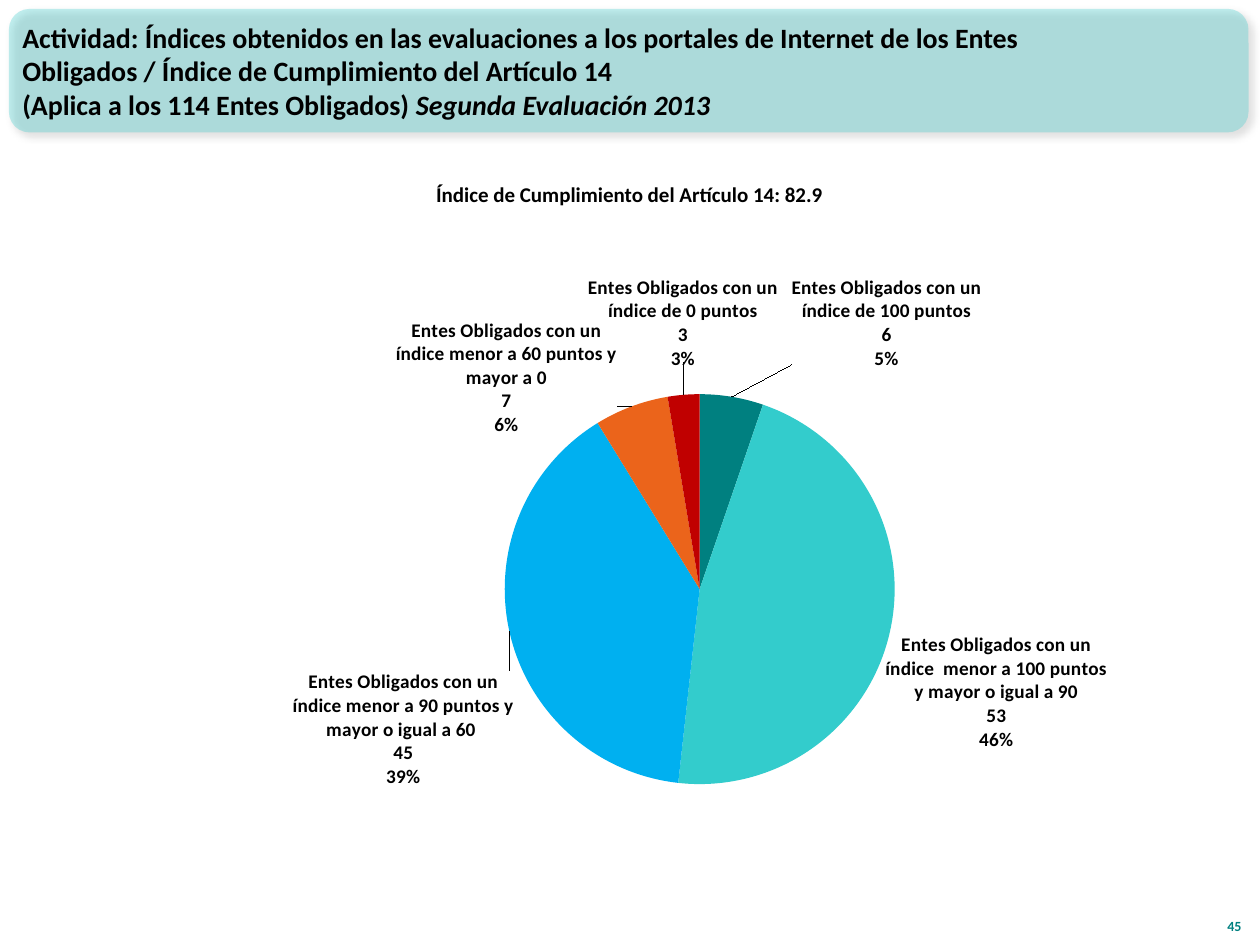
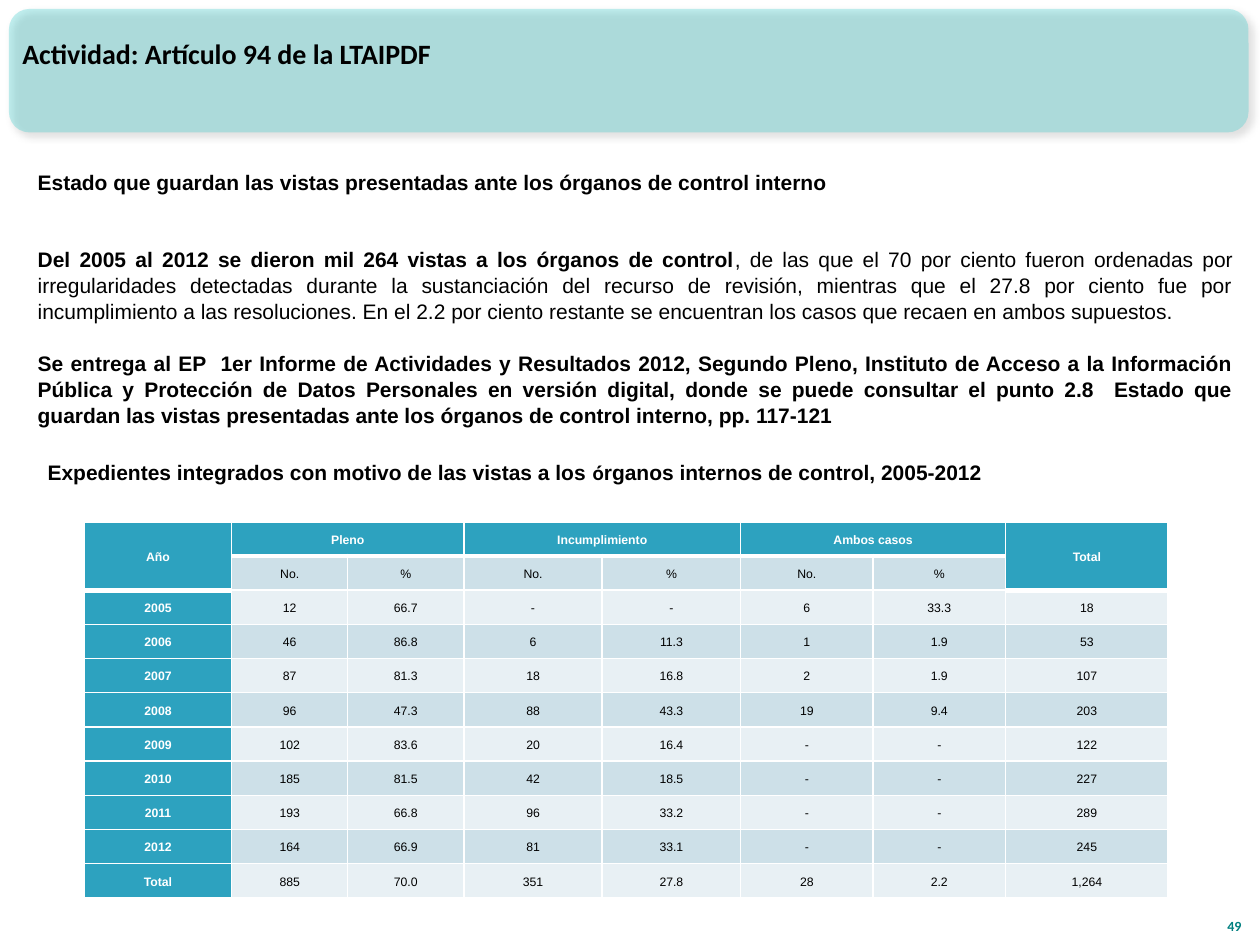
from lxml import etree
from pptx import Presentation
from pptx.chart.data import CategoryChartData as Data
from pptx.dml.color import RGBColor as RGB
from pptx.enum.chart import XL_CHART_TYPE as Kind
from pptx.enum.shapes import MSO_SHAPE as Shape
from pptx.enum.text import MSO_ANCHOR as Anchor, PP_ALIGN as Align
from pptx.oxml import parse_xml
from pptx.oxml.ns import nsdecls, qn
from pptx.util import Cm, Pt

HUES = {
    "ink": "000000", "white": "FFFFFF", "band": "33CCCC", "page": "008080",
    "head": "2DA2BF", "dark": "CDE0E8", "pale": "E8F0F4",
}
SLICES = ["008080", "33CCCC", "00B0F0", "EB641B", "C00000"]
CATS = [
    "Entes Obligados con un índice de 100 puntos",
    "Entes Obligados con un índice  menor a 100 puntos y mayor o igual a 90",
    "Entes Obligados con un índice menor a 90 puntos y mayor o igual a 60 ",
    "Entes Obligados con un índice menor a 60 puntos y mayor a 0",
    "Entes Obligados con un índice de 0 puntos",
]
COUNTS = [6, 53, 45, 7, 3]
# Shift of each label from its slice, and its height, as shares of the chart
SHIFTS = [(0.05, -0.04, 0.16), (-0.01, 0, 0.2), (0.01, 0.06, 0.2),
          (-0.01, 0.06, 0.2), (0, -0.04, 0.16)]
ROWS = [
    ["Año", "Pleno", "", "Incumplimiento", "", "Ambos casos", "", "Total"],
    ["", "No.", "%", "No.", "%", "No.", "%", ""],
    ["2005", "12", "66.7", "-", "-", "6", "33.3", "18"],
    ["2006", "46", "86.8", "6", "11.3", "1", "1.9", "53"],
    ["2007", "87", "81.3", "18", "16.8", "2", "1.9", "107"],
    ["2008", "96", "47.3", "88", "43.3", "19", "9.4", "203"],
    ["2009", "102", "83.6", "20", "16.4", "-", "-", "122"],
    ["2010", "185", "81.5", "42", "18.5", "-", "-", "227"],
    ["2011", "193", "66.8", "96", "33.2", "-", "-", "289"],
    ["2012", "164", "66.9", "81", "33.1", "-", "-", "245"],
    ["Total", "885", "70.0", "351", "27.8", "28", "2.2", "1,264"],
]
WIDTHS = [2.97, 2.34, 2.34, 2.79, 2.79, 2.67, 2.67, 3.28]
MERGES = [(0, 0, 1, 0), (0, 1, 0, 2), (0, 3, 0, 4), (0, 5, 0, 6), (0, 7, 1, 7)]


def put(obj, vals):
    for key, val in vals.items():
        setattr(obj, key, val)


def label(idx, shift):
    """Return the XML of one slice label: category, value and percent."""
    x, y, tall = shift
    shows = {"LegendKey": 0, "Val": 1, "CatName": 1, "SerName": 0,
             "Percent": 1, "BubbleSize": 0}
    flags = "".join(f'<c:show{k} val="{v}"/>' for k, v in shows.items())
    return f'''<c:dLbl><c:idx val="{idx}"/>
<c:layout><c:manualLayout><c:x val="{x}"/><c:y val="{y}"/></c:manualLayout></c:layout>
<c:txPr><a:bodyPr wrap="square"/><a:lstStyle/><a:p><a:pPr><a:defRPr sz="1100" b="1">
<a:solidFill><a:srgbClr val="{HUES['ink']}"/></a:solidFill><a:latin typeface="Calibri"/>
</a:defRPr></a:pPr><a:endParaRPr lang="es-MX"/></a:p></c:txPr>
<c:dLblPos val="outEnd"/>{flags}<c:separator>\n</c:separator>
<c:extLst><c:ext uri="{{CE6537A1-D6FC-4f65-9D91-7224C49458BB}}"
xmlns:c15="http://schemas.microsoft.com/office/drawing/2012/chart"><c15:layout>
<c:manualLayout><c:w val="0.2"/><c:h val="{tall}"/></c:manualLayout>
</c15:layout></c:ext></c:extLst></c:dLbl>'''


class Deck:
    def __init__(self):
        self.prs = Presentation()
        put(self.prs, {"slide_width": Cm(25.4), "slide_height": Cm(19.05)})
        self.slide = None

    def hue(self, name):
        return RGB.from_string(HUES[name])

    def fill(self, obj, code):
        obj.fill.solid()
        obj.fill.fore_color.rgb = RGB.from_string(code)

    def runs(self, para, parts, hue="ink", **base):
        """Write (text, changes) parts, each on top of the base font."""
        for text, diff in parts:
            run = para.add_run()
            run.text = text
            put(run.font, {"bold": True, **base, **diff})
            run.font.color.rgb = self.hue(hue)

    def text(self, at, paras, hue="ink", frame=None, form=None, gaps=(), **font):
        box = self.slide.shapes.add_textbox(*map(Cm, at)).text_frame
        put(box, {"word_wrap": True, **(frame or {})})
        for i, parts in enumerate(paras):
            para = box.add_paragraph() if i else box.paragraphs[0]
            put(para, form or {})
            if i and gaps:
                para.space_before = Pt(gaps[i - 1])
            self.runs(para, parts, hue, **font)

    def band(self):
        box = self.slide.shapes.add_shape(
            Shape.ROUNDED_RECTANGLE, *map(Cm, (0.18, 0.18, 24.99, 2.49)))
        self.fill(box, HUES["band"])
        box.line.fill.background()
        tint = box.fill._xPr.find(qn("a:solidFill"))[0]
        etree.SubElement(tint, qn("a:alpha")).set("val", "30000")
        box._element.spPr.append(parse_xml(
            f'<a:effectLst {nsdecls("a")}><a:outerShdw blurRad="50800" '
            'dist="38100" dir="2700000" algn="tl" rotWithShape="0">'
            f'<a:srgbClr val="{HUES["ink"]}"><a:alpha val="40000"/></a:srgbClr>'
            '</a:outerShdw></a:effectLst>'))

    def page(self, num, title, foot=0.13):
        """Start a slide with its band, title and number."""
        self.slide = self.prs.slides.add_slide(self.prs.slide_layouts[6])
        self.band()
        self.text((0.2, 0.23, 23.29, 2.39), title, name="Calibri", size=Pt(16),
                  frame={"vertical_anchor": Anchor.MIDDLE,
                         "margin_bottom": Cm(foot)})
        self.text((24.26, 17.93, 1.02, 1.02), [[(num, {})]], "page",
                  {"vertical_anchor": Anchor.BOTTOM},
                  {"alignment": Align.RIGHT}, name="Calibri", size=Pt(8))

    def pie(self, at):
        data = Data()
        data.categories = CATS
        data.add_series("Series 1", COUNTS)
        chart = self.slide.shapes.add_chart(Kind.PIE, *map(Cm, at), data).chart
        put(chart, {"has_title": False, "has_legend": False})
        put(chart.font, {"size": Pt(11), "bold": True, "name": "Calibri"})
        chart.font.color.rgb = self.hue("ink")
        plot = chart.plots[0]
        plot.vary_by_categories = True
        series = plot.series[0]
        for i, code in enumerate(SLICES):
            self.fill(series.points[i].format, code)
        tags = "".join(label(i, s) for i, s in enumerate(SHIFTS))
        node = parse_xml(
            f'<c:dLbls {nsdecls("c", "a")}>{tags}<c:dLblPos val="outEnd"/>'
            '<c:showLegendKey val="0"/><c:showVal val="1"/>'
            '<c:showCatName val="1"/><c:showSerName val="0"/>'
            '<c:showPercent val="1"/><c:showBubbleSize val="0"/>'
            '<c:separator>\n</c:separator><c:showLeaderLines val="1"/></c:dLbls>')
        series._element.find(qn("c:cat")).addprevious(node)
        area = chart._chartSpace.chart.plotArea
        old = area.find(qn("c:layout"))
        if old is not None:
            area.remove(old)
        sides = {"x": 0.364, "y": 0.191, "w": 0.392, "h": 0.629}
        spots = "".join(f'<c:{k} val="{v:.3f}"/>' for k, v in sides.items())
        area.insert(0, parse_xml(
            f'<c:layout {nsdecls("c")}><c:manualLayout>'
            '<c:layoutTarget val="inner"/><c:xMode val="edge"/>'
            f'<c:yMode val="edge"/>{spots}</c:manualLayout></c:layout>'))

    def edge(self, cell, low):
        """Draw white cell borders, the bottom one low points wide."""
        props = cell._tc.get_or_add_tcPr()
        for i, side in enumerate(("L", "R", "T", "B")):
            wide = Pt(low if side == "B" else 1)
            props.insert(i, parse_xml(
                f'<a:ln{side} {nsdecls("a")} w="{wide}"><a:solidFill>'
                f'<a:srgbClr val="{HUES["white"]}"/></a:solidFill></a:ln{side}>'))

    def table(self, at):
        grid = self.slide.shapes.add_table(
            len(ROWS), len(WIDTHS), *map(Cm, at)).table
        put(grid, {"first_row": False, "horz_banding": False})
        for col, wide in zip(grid.columns, WIDTHS):
            col.width = Cm(wide)
        for r, row in enumerate(ROWS):
            grid.rows[r].height = Cm(at[3] / len(ROWS))
            for c, word in enumerate(row):
                cell = grid.cell(r, c)
                top = r == 0 or (r == 1 and c in (0, 7))
                head = top or c == 0
                put(cell, {"vertical_anchor": Anchor.MIDDLE,
                           "margin_left": Cm(0.13), "margin_right": Cm(0.13),
                           "margin_top": 0, "margin_bottom": 0})
                self.fill(cell, HUES["head" if head else
                                     "dark" if r % 2 else "pale"])
                self.edge(cell, 3 if top else 1)
                para = cell.text_frame.paragraphs[0]
                put(para, {"alignment": Align.CENTER, "line_spacing": 1.15})
                para.font.size = Pt(7)
                if word:
                    self.runs(para, [(word, {})], "white" if head else "ink",
                              name="Arial", size=Pt(7), bold=head)
        for r, c, r2, c2 in MERGES:
            grid.cell(r, c).merge(grid.cell(r2, c2))


def main():
    deck = Deck()
    deck.page("45", [
        [("Actividad: Índices obtenidos en las evaluaciones a los portales de "
          "Internet de los Entes Obligados / Índice de Cumplimiento del "
          "Artículo 14", {})],
        [("(Aplica a los 114 Entes Obligados) ", {}),
         ("Segunda Evaluación 2013", {"italic": True})]])
    deck.text((4.75, 3.53, 15.88, 0.77),
              [[("Índice de Cumplimiento del Artículo 14: 82.9", {})]],
              form={"alignment": Align.CENTER}, name="Calibri", size=Pt(12))
    deck.pie((0.89, 5.56, 23.6, 12.5))

    deck.page("49", [[("Actividad: Artículo 94 de la LTAIPDF", {})]], 0.82)
    body = {"name": "Arial", "size": Pt(12)}
    deck.text((0.51, 3.28, 24.61, 5.38), [
        [("Estado que guardan las vistas presentadas ante los órganos de "
          "control interno", {})],
        [("Del 2005 al 2012 se dieron mil 264 vistas a los órganos de control",
          {}),
         (", de las que el 70 por ciento fueron ordenadas por irregularidades "
          "detectadas durante la sustanciación del recurso de revisión, "
          "mientras que el 27.8 por ciento fue por incumplimiento a las "
          "resoluciones. En el 2.2 por ciento restante se encuentran los casos "
          "que recaen en ambos supuestos.", {"bold": False})],
        [("Se entrega al EP  1er Informe de Actividades y Resultados 2012, "
          "Segundo Pleno, Instituto de Acceso a la Información Pública y "
          "Protección de Datos Personales en versión digital, donde se puede "
          "consultar el punto 2.8  Estado que guardan las vistas presentadas "
          "ante los órganos de control interno, pp. 117-121", {})]],
        form={"alignment": Align.JUSTIFY, "line_spacing": 1.04},
        gaps=(28.8, 14.4), **body)
    deck.table((1.7, 10.52, 21.82, 7.59))
    deck.text((0.71, 9.14, 24.41, 0.77), [
        [("Expedientes integrados con motivo de las vistas a los ", {}),
         ("ó", {"name": "Calibri"}),
         ("rganos internos de control, 2005-2012", {})]],
        frame={"vertical_anchor": Anchor.MIDDLE},
        form={"alignment": Align.JUSTIFY}, **body)
    deck.prs.save("out.pptx")


if __name__ == "__main__":
    main()
